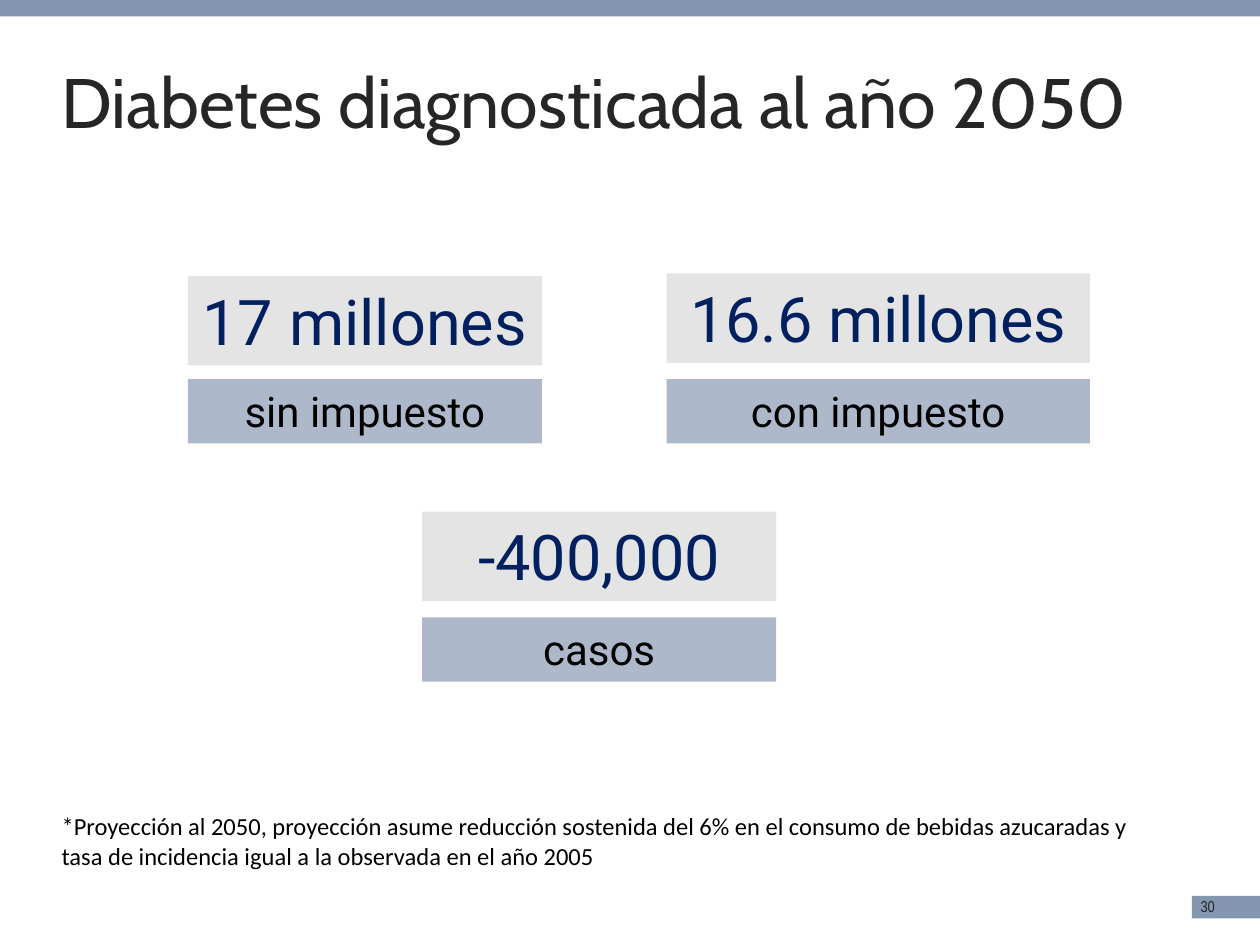
from dataclasses import dataclass

from pptx import Presentation
from pptx.dml.color import RGBColor
from pptx.enum import shapes, text
from pptx.util import Inches, Pt


@dataclass(frozen=True)
class Theme:
    accent: str = "8497B0"
    figure_fill: str = "E4E4E4"
    caption_fill: str = "ADB9CA"
    dark: str = "262626"
    navy: str = "002060"
    black: str = "000000"
    title_size: int = 40
    figure_size: int = 36
    caption_size: int = 24
    note_size: int = 14
    number_size: int = 9
    title_font: str = "Cabin"
    figure_font: str = "Roboto"
    note_font: str = "Calibri"
    number_font: str = "Arial Narrow"


THEME = Theme()
FIGURE_HEIGHT, CAPTION_HEIGHT = 0.71, 0.51

# left, width, figure top, caption top, figure, caption
RESULTS = [
    (1.49, 2.81, 2.19, 3.01, "17 millones", "sin impuesto"),
    (5.29, 3.36, 2.17, 3.01, "16.6 millones", "con impuesto"),
    (3.35, 2.81, 4.06, 4.9, "-400,000", "casos"),
]
NOTE = (
    "*Proyección al 2050, proyección asume reducción sostenida del 6% en el "
    "consumo de bebidas azucaradas y tasa de incidencia igual a la observada "
    "en el año 2005"
)


def write(sp, words, font, size, color, align=text.PP_ALIGN.LEFT,
          anchor=text.MSO_ANCHOR.TOP, wrap=True):
    tf = sp.text_frame
    tf.word_wrap = wrap
    tf.vertical_anchor = anchor
    p = tf.paragraphs[0]
    p.text = words
    p.alignment = align
    p.font.name = font
    p.font.size = Pt(size)
    p.font.color.rgb = RGBColor.from_string(color)


def add_box(slide, left, top, width, height, fill):
    sp = slide.shapes.add_shape(
        shapes.MSO_SHAPE.RECTANGLE,
        Inches(left), Inches(top), Inches(width), Inches(height))
    sp.shadow.inherit = False
    sp.fill.solid()
    sp.fill.fore_color.rgb = RGBColor.from_string(fill)
    sp.line.fill.background()
    return sp


def add_text(slide, left, top, width, height, words, font, size, color, **layout):
    sp = slide.shapes.add_textbox(
        Inches(left), Inches(top), Inches(width), Inches(height))
    write(sp, words, font, size, color, **layout)


def add_result(slide, left, width, figure_top, caption_top, figure, caption):
    """Add a large figure with its caption bar below."""
    t = THEME
    center = text.PP_ALIGN.CENTER
    sp = add_box(slide, left, figure_top, width, FIGURE_HEIGHT, t.figure_fill)
    write(sp, figure, t.figure_font, t.figure_size, t.navy, center)
    sp = add_box(slide, left, caption_top, width, CAPTION_HEIGHT, t.caption_fill)
    write(sp, caption, t.figure_font, t.caption_size, t.black, center)


def main():
    t = THEME
    prs = Presentation()
    prs.slide_width, prs.slide_height = Inches(10), Inches(7.5)
    slide = prs.slides.add_slide(prs.slide_layouts[6])

    add_box(slide, 9.46, 7.11, 0.54, 0.18, t.accent)
    add_text(slide, 9.43, 7.07, 0.39, 0.25, "30",
             t.number_font, t.number_size, t.dark, wrap=False)
    add_box(slide, 0, -0.02, 10, 0.15, t.accent)
    add_text(slide, 0.39, 0.41, 9, 0.77, "Diabetes diagnosticada al año 2050",
             t.title_font, t.title_size, t.dark, anchor=text.MSO_ANCHOR.MIDDLE)
    for result in RESULTS:
        add_result(slide, *result)
    add_text(slide, 0.39, 6.39, 9.02, 0.57, NOTE,
             t.note_font, t.note_size, t.black)

    prs.save("out.pptx")


if __name__ == "__main__":
    main()
